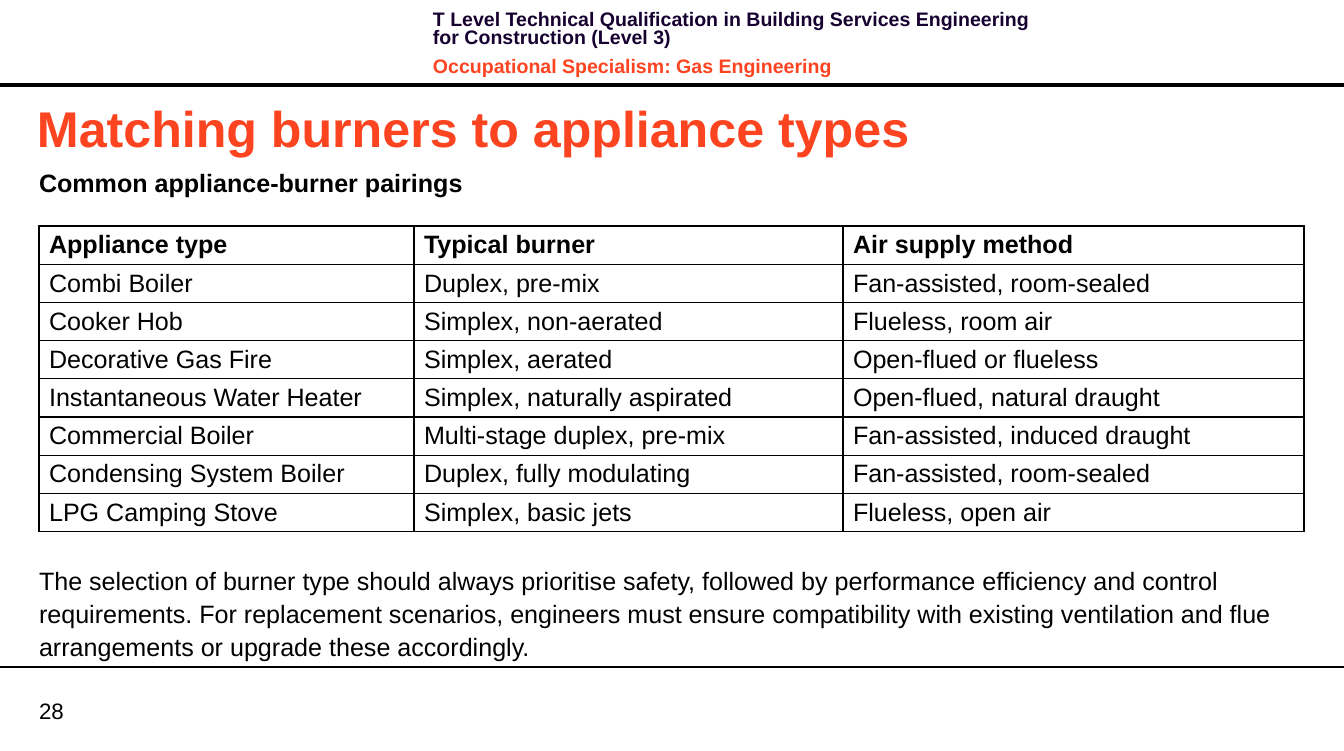
from lxml.etree import SubElement
from pptx import Presentation
from pptx.dml.color import RGBColor
from pptx.enum.shapes import MSO_CONNECTOR, MSO_SHAPE
from pptx.enum.text import MSO_ANCHOR, MSO_AUTO_SIZE, PP_ALIGN
from pptx.oxml import parse_xml
from pptx.oxml.ns import nsdecls, qn
from pptx.util import Emu, Pt

SCALE = 914400 / 100.4
WIDTH, HEIGHT = 1344, 751
MARGIN = 39
FONT = "Arial"
COLORS = {"black": "000000", "navy": "170130", "orange": "FC4421"}

COLUMN_WIDTHS = [375, 429, 461]
ROW_HEIGHT = 38
PAIRINGS = [
    ("Appliance type", "Typical burner", "Air supply method"),
    ("Combi Boiler", "Duplex, pre-mix", "Fan-assisted, room-sealed"),
    ("Cooker Hob", "Simplex, non-aerated", "Flueless, room air"),
    ("Decorative Gas Fire", "Simplex, aerated", "Open-flued or flueless"),
    ("Instantaneous Water Heater", "Simplex, naturally aspirated", "Open-flued, natural draught"),
    ("Commercial Boiler", "Multi-stage duplex, pre-mix", "Fan-assisted, induced draught"),
    ("Condensing System Boiler", "Duplex, fully modulating", "Fan-assisted, room-sealed"),
    ("LPG Camping Stove", "Simplex, basic jets", "Flueless, open air"),
]
SUBHEADING = "Common appliance-burner pairings"
ADVICE = (
    "The selection of burner type should always prioritise safety, followed by "
    "performance efficiency and control requirements. For replacement scenarios, "
    "engineers must ensure compatibility with existing ventilation and flue "
    "arrangements or upgrade these accordingly."
)


def px(length):
    return Emu(round(length * SCALE))


def color(name):
    return RGBColor.from_string(COLORS[name])


def write(paragraph, text, size, color_name="black", bold=False):
    paragraph.text = text
    paragraph.alignment = PP_ALIGN.LEFT
    for run in paragraph.runs:
        run.font.name = FONT
        run.font.size = Pt(size)
        run.font.bold = bold
        run.font.color.rgb = color(color_name)


def prepare_frame(shape, anchor, inset_x, inset_y):
    frame = shape.text_frame
    frame.word_wrap = True
    frame.auto_size = MSO_AUTO_SIZE.NONE
    frame.vertical_anchor = anchor
    frame.margin_left = frame.margin_right = px(inset_x)
    frame.margin_top = frame.margin_bottom = px(inset_y)
    return frame


def place(shape, left, top, width, height):
    shape.left, shape.top = px(left), px(top)
    shape.width, shape.height = px(width), px(height)


def add_text_box(slide, left, top, width, height, anchor, inset_x, inset_y):
    box = slide.shapes.add_textbox(px(left), px(top), px(width), px(height))
    return prepare_frame(box, anchor, inset_x, inset_y)


def add_header(slide):
    bar = slide.shapes.add_shape(MSO_SHAPE.RECTANGLE, 0, px(83), px(WIDTH), px(4))
    bar.shadow.inherit = False
    bar.fill.solid()
    bar.fill.fore_color.rgb = color("black")
    bar.line.fill.background()

    frame = add_text_box(slide, 423, 7, 640, 64, MSO_ANCHOR.TOP, 10, 5)
    qualification, specialism = frame.paragraphs[0], frame.add_paragraph()
    write(qualification, "T Level Technical Qualification in Building Services "
          "Engineering for Construction (Level 3)", 14, "navy", True)
    write(specialism, "Occupational Specialism: Gas Engineering", 14, "orange", True)
    for paragraph in (qualification, specialism):
        paragraph.line_spacing = Pt(13.1)
        paragraph.space_after = Pt(4)
    specialism.space_before = Pt(4)


def add_footer(slide):
    rule = slide.shapes.add_connector(
        MSO_CONNECTOR.STRAIGHT, 0, px(667), px(WIDTH), px(667))
    rule.line.color.rgb = color("black")
    rule.line.width = Pt(0.75)
    SubElement(rule.element.spPr, qn("a:effectLst"))

    frame = add_text_box(slide, MARGIN, 697, 64, 27, MSO_ANCHOR.MIDDLE, 0, 0)
    write(frame.paragraphs[0], "28", 16)


def fill_title(title):
    place(title, 27, 92, 1277, 71)
    frame = prepare_frame(title, MSO_ANCHOR.MIDDLE, 10, 5)
    write(frame.paragraphs[0], "Matching burners to appliance types", 36, "orange", True)


def fill_body(body):
    place(body, MARGIN, 164, 1277, 455)
    frame = prepare_frame(body, MSO_ANCHOR.TOP, 0, 0)
    subheading, advice = frame.paragraphs[0], frame.add_paragraph()
    write(subheading, SUBHEADING, 18, bold=True)
    write(advice, ADVICE, 18)
    for paragraph in (subheading, advice):
        paragraph.line_spacing = 1.1
        paragraph.space_before = Pt(0)
        paragraph.space_after = Pt(12)
        properties = paragraph._p.get_or_add_pPr()
        properties.set("marL", "0")
        properties.set("indent", "0")
        SubElement(properties, qn("a:buNone"))
    # Room for the table between the two paragraphs
    advice.space_before = Pt(250)


def set_borders(cell):
    properties = cell._tc.get_or_add_tcPr()
    for side in ("lnL", "lnR", "lnT", "lnB"):
        properties.append(parse_xml(
            f'<a:{side} {nsdecls("a")} w="{Pt(1)}"><a:solidFill>'
            f'<a:srgbClr val="{COLORS["black"]}"/></a:solidFill></a:{side}>'))


def add_pairings_table(slide):
    table = slide.shapes.add_table(
        len(PAIRINGS), len(COLUMN_WIDTHS), px(MARGIN), px(226),
        px(sum(COLUMN_WIDTHS)), px(ROW_HEIGHT * len(PAIRINGS))).table
    table.first_row = table.horz_banding = False
    for column, width in zip(table.columns, COLUMN_WIDTHS):
        column.width = px(width)
    for row_index, texts in enumerate(PAIRINGS):
        table.rows[row_index].height = px(ROW_HEIGHT)
        for column_index, text in enumerate(texts):
            cell = table.cell(row_index, column_index)
            cell.vertical_anchor = MSO_ANCHOR.MIDDLE
            set_borders(cell)
            cell.fill.background()
            write(cell.text_frame.paragraphs[0], text, 18, bold=row_index == 0)


def main():
    presentation = Presentation()
    presentation.slide_width, presentation.slide_height = px(WIDTH), px(HEIGHT)
    slide = presentation.slides.add_slide(presentation.slide_layouts[1])

    # Frame of the page
    add_header(slide)
    add_footer(slide)

    # Content
    fill_title(slide.shapes.title)
    fill_body(slide.placeholders[1])
    add_pairings_table(slide)

    presentation.save("out.pptx")


if __name__ == "__main__":
    main()
